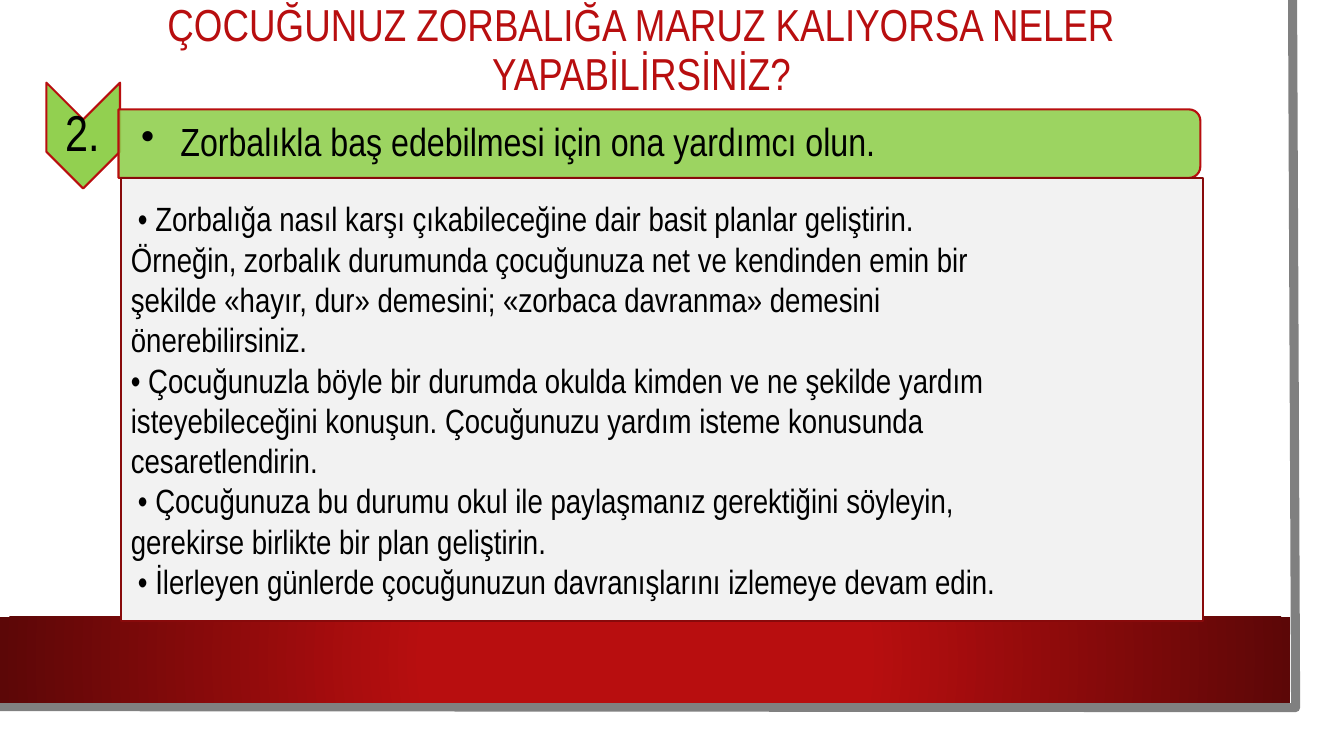
from dataclasses import dataclass

from lxml import etree
from pptx import Presentation
from pptx.dml.color import RGBColor
from pptx.enum.shapes import MSO_SHAPE as Shape
from pptx.enum.text import MSO_ANCHOR as Anchor, PP_ALIGN as Align
from pptx.oxml import parse_xml
from pptx.oxml.ns import nsdecls, qn
from pptx.util import Inches, Pt

TITLE = "ÇOCUĞUNUZ ZORBALIĞA MARUZ KALIYORSA NELER YAPABİLİRSİNİZ?"
STEP = "2."
HEADING = "Zorbalıkla baş edebilmesi için ona yardımcı olun."
# Each point: first-line indent in inches, then its lines
POINTS = [
    (0.07, ["• Zorbalığa nasıl karşı çıkabileceğine dair basit planlar geliştirin.",
            "Örneğin, zorbalık durumunda çocuğunuza net ve kendinden emin bir",
            "şekilde «hayır, dur» demesini; «zorbaca davranma» demesini",
            "önerebilirsiniz."]),
    (0, ["• Çocuğunuzla böyle bir durumda okulda kimden ve ne şekilde yardım",
         "isteyebileceğini konuşun. Çocuğunuzu yardım isteme konusunda",
         "cesaretlendirin."]),
    (0.07, ["• Çocuğunuza bu durumu okul ile paylaşmanız gerektiğini söyleyin,",
            "gerekirse birlikte bir plan geliştirin."]),
    (0.07, ["• İlerleyen günlerde çocuğunuzun davranışlarını izlemeye devam edin."]),
]


@dataclass(frozen=True)
class Theme:
    font: str = "Arial Narrow"
    red: str = "B80E0F"
    dark_red: str = "880A0B"
    deep_red: str = "5C0707"
    green: str = "92D050"
    pale: str = "F2F2F2"
    grey: str = "808080"
    white: str = "FFFFFF"
    black: str = "000000"
    title: int = 32
    step: int = 36
    heading: int = 28
    body: int = 24
    outline: float = 1.5
    frame: float = 6.5


T = Theme()


def rgb(value):
    return RGBColor.from_string(value)


def add_block(s, kind, box, fill, line=None, rotation=0):
    sp = s.shapes.add_shape(kind, *map(Inches, box))
    sp.shadow.inherit = False
    sp.rotation = rotation
    sp.fill.solid()
    sp.fill.fore_color.rgb = rgb(fill)
    if line:
        sp.line.color.rgb = rgb(line)
        sp.line.width = Pt(T.outline)
    else:
        sp.line.fill.background()
    return sp


def setup_frame(sp, insets=(0.1, 0.05, 0.1, 0.05)):
    tf = sp.text_frame
    tf.word_wrap = True
    tf.vertical_anchor = Anchor.MIDDLE
    (tf.margin_left, tf.margin_top,
     tf.margin_right, tf.margin_bottom) = map(Inches, insets)
    return tf


def add_run(p, text, size, color=T.black):
    r = p.add_run()
    r.text = text
    r.font.name = T.font
    r.font.size = Pt(size)
    r.font.color.rgb = rgb(color)


def set_indent(p, left, first):
    pPr = p._p.get_or_add_pPr()
    pPr.set("marL", str(Inches(left)))
    pPr.set("indent", str(Inches(first)))
    return pPr


def add_backdrop(s):
    add_block(s, Shape.RECTANGLE, (0, 0, 13.1, 7.27), T.white)

    builder = s.shapes.build_freeform(Inches(12.82), 0)
    builder.add_line_segments(
        [(Inches(12.85), Inches(7.02)), (Inches(-0.03), Inches(7.01))], close=False)
    edge = builder.convert_to_shape()
    edge.shadow.inherit = False
    edge.fill.background()
    edge.line.color.rgb = rgb(T.grey)
    edge.line.width = Pt(T.frame)

    band = add_block(s, Shape.RECTANGLE, (0, 6.12, 12.8, 0.85), T.red)
    solid = band._element.spPr.find(qn("a:solidFill"))
    solid.getparent().replace(solid, parse_xml(
        f'<a:gradFill {nsdecls("a")} rotWithShape="1"><a:gsLst>'
        f'<a:gs pos="34000"><a:srgbClr val="{T.red}"/></a:gs>'
        f'<a:gs pos="100000"><a:srgbClr val="{T.deep_red}"/></a:gs></a:gsLst>'
        '<a:path path="circle"><a:fillToRect l="50000" t="50000" r="50000" b="50000"/>'
        '</a:path></a:gradFill>'))


def add_title(s):
    title = s.shapes.title
    s.shapes._spTree.append(title._element)  # in front of the backdrop
    title.left, title.top, title.width, title.height = map(
        Inches, (0.68, 0.21, 11.37, 0.6))
    p = setup_frame(title).paragraphs[0]
    p.alignment = Align.CENTER
    p.line_spacing = 0.9
    add_run(p, TITLE, T.title, T.red)


def add_step(s):
    add_block(s, Shape.CHEVRON, (0.3, 0.98, 1.05, 0.73), T.green, T.red, 90)
    label = s.shapes.add_textbox(*map(Inches, (0.46, 1.19, 0.73, 0.31)))
    p = setup_frame(label, (0.03,) * 4).paragraphs[0]
    p.alignment = Align.CENTER
    p.line_spacing = 0.9
    add_run(p, STEP, T.step)


def add_heading(s):
    banner = add_block(s, Shape.ROUND_2_SAME_RECTANGLE, (6.2, -3.94, 0.68, 10.73),
                       T.green, T.red, 90)
    color = banner._element.spPr.find(qn("a:solidFill"))[0]
    etree.SubElement(color, qn("a:alpha")).set("val", "90000")

    label = s.shapes.add_textbox(*map(Inches, (1.18, 1.12, 10.7, 0.61)))
    p = setup_frame(label, (0.22, 0.02, 0.02, 0.02)).paragraphs[0]
    p.line_spacing = 0.9
    pPr = set_indent(p, 0.39, -0.39)
    etree.SubElement(pPr, qn("a:buChar")).set("char", "•")
    add_run(p, HEADING, T.heading)


def add_points(s):
    panel = add_block(s, Shape.RECTANGLE, (1.2, 1.77, 10.73, 4.39), T.pale, T.dark_red)
    tf = setup_frame(panel)
    for i, (first, lines) in enumerate(POINTS):
        p = tf.add_paragraph() if i else tf.paragraphs[0]
        p.alignment = Align.LEFT
        set_indent(p, 0, first)
        for j, line in enumerate(lines):
            if j:
                p.add_line_break()
            add_run(p, line, T.body)


def main():
    prs = Presentation()
    prs.slide_width, prs.slide_height = Inches(13.33), Inches(7.5)
    s = prs.slides.add_slide(prs.slide_layouts[5])
    add_backdrop(s)
    add_title(s)
    add_step(s)
    add_heading(s)
    add_points(s)
    prs.save("out.pptx")


if __name__ == "__main__":
    main()
